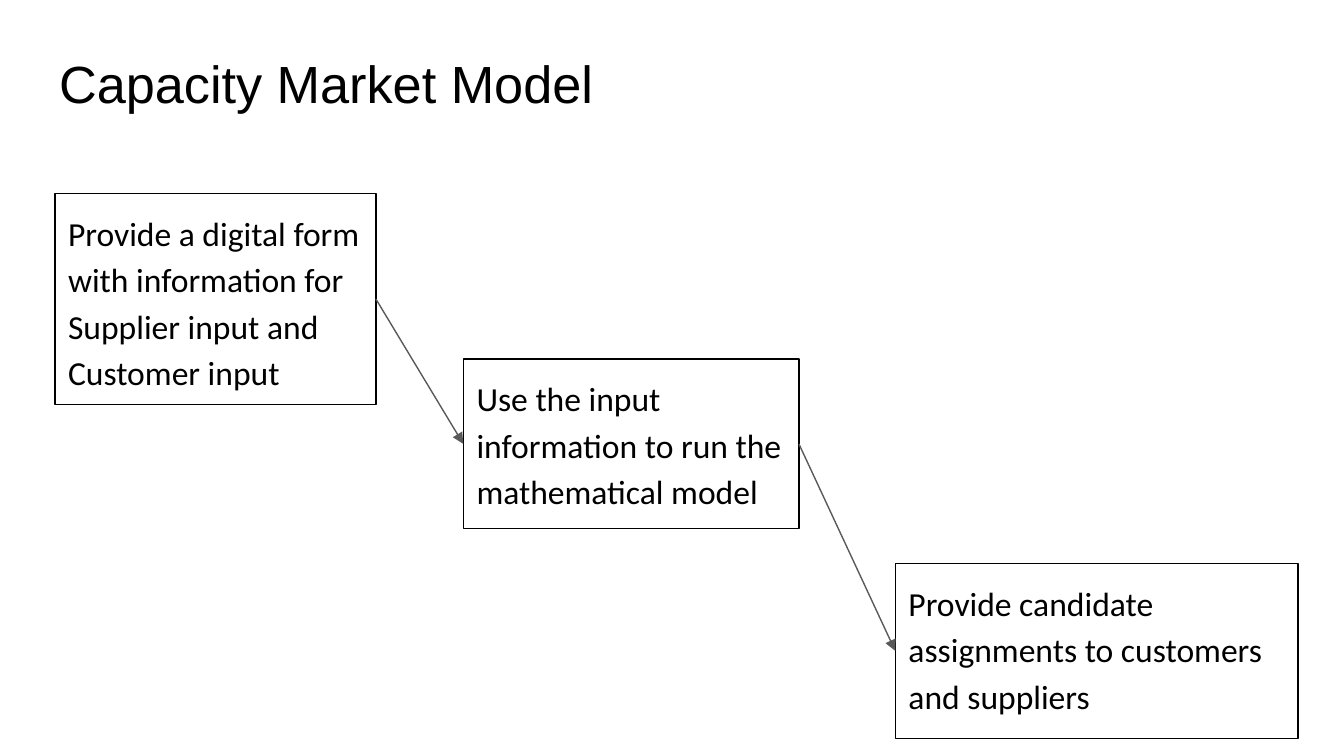
from dataclasses import dataclass
from itertools import pairwise

from lxml.etree import SubElement
from pptx import Presentation
from pptx.dml.color import RGBColor
from pptx.enum.shapes import MSO_CONNECTOR, MSO_SHAPE
from pptx.enum.text import MSO_ANCHOR, PP_ALIGN
from pptx.oxml.ns import qn
from pptx.slide import Slide
from pptx.text.text import TextFrame
from pptx.util import Pt

BLACK = RGBColor(0x00, 0x00, 0x00)
GREY = RGBColor(0x59, 0x59, 0x59)
INSET = Pt(7.2)
STROKE = Pt(0.75)


@dataclass(frozen=True)
class Step:
    text: str
    left: float
    top: float
    width: float
    height: float

    @property
    def right(self) -> float:
        return self.left + self.width

    @property
    def middle(self) -> float:
        return self.top + self.height / 2


STEPS = [
    Step("Provide a digital form with information for Supplier input and Customer input",
         29.4, 103.7, 172, 113),
    Step("Use the input information to run the mathematical model",
         248.2, 192.3, 179.8, 91),
    Step("Provide candidate assignments to customers and suppliers",
         479.6, 301.8, 215.8, 93.8),
]


def write(frame: TextFrame, text: str, *, font: str, size: float,
          color: RGBColor = BLACK, spacing: float = 1.0) -> None:
    frame.word_wrap = True
    frame.vertical_anchor = MSO_ANCHOR.TOP
    frame.margin_left = frame.margin_right = INSET
    frame.margin_top = frame.margin_bottom = INSET
    para = frame.paragraphs[0]
    para.alignment = PP_ALIGN.LEFT
    para.line_spacing = spacing
    run = para.add_run()
    run.text = text
    run.font.name = font
    run.font.size = Pt(size)
    run.font.color.rgb = color


def add_title(slide: Slide, text: str) -> None:
    title = slide.shapes.title
    title.left, title.top = Pt(24.5), Pt(20.2)
    title.width, title.height = Pt(671), Pt(45.4)
    write(title.text_frame, text, font="Arial", size=28)


def add_step(slide: Slide, step: Step) -> None:
    box = slide.shapes.add_shape(
        MSO_SHAPE.RECTANGLE, Pt(step.left), Pt(step.top), Pt(step.width), Pt(step.height))
    box.shadow.inherit = False
    box.fill.background()
    box.line.color.rgb = BLACK
    box.line.width = STROKE
    write(box.text_frame, step.text, font="Calibri", size=18, spacing=1.15)


def add_arrow(slide: Slide, start: Step, end: Step) -> None:
    arrow = slide.shapes.add_connector(
        MSO_CONNECTOR.STRAIGHT, Pt(start.right), Pt(start.middle), Pt(end.left), Pt(end.middle))
    arrow.line.color.rgb = GREY
    arrow.line.width = STROKE
    SubElement(arrow.line._get_or_add_ln(), qn("a:tailEnd"), type="triangle")
    SubElement(arrow._element.spPr, qn("a:effectLst"))


def main() -> None:
    deck = Presentation()
    deck.slide_width, deck.slide_height = Pt(720), Pt(405)
    slide = deck.slides.add_slide(deck.slide_layouts[5])
    add_title(slide, "Capacity Market Model")
    for step in STEPS:
        add_step(slide, step)
    for start, end in pairwise(STEPS):
        add_arrow(slide, start, end)
    deck.save("out.pptx")


if __name__ == "__main__":
    main()
